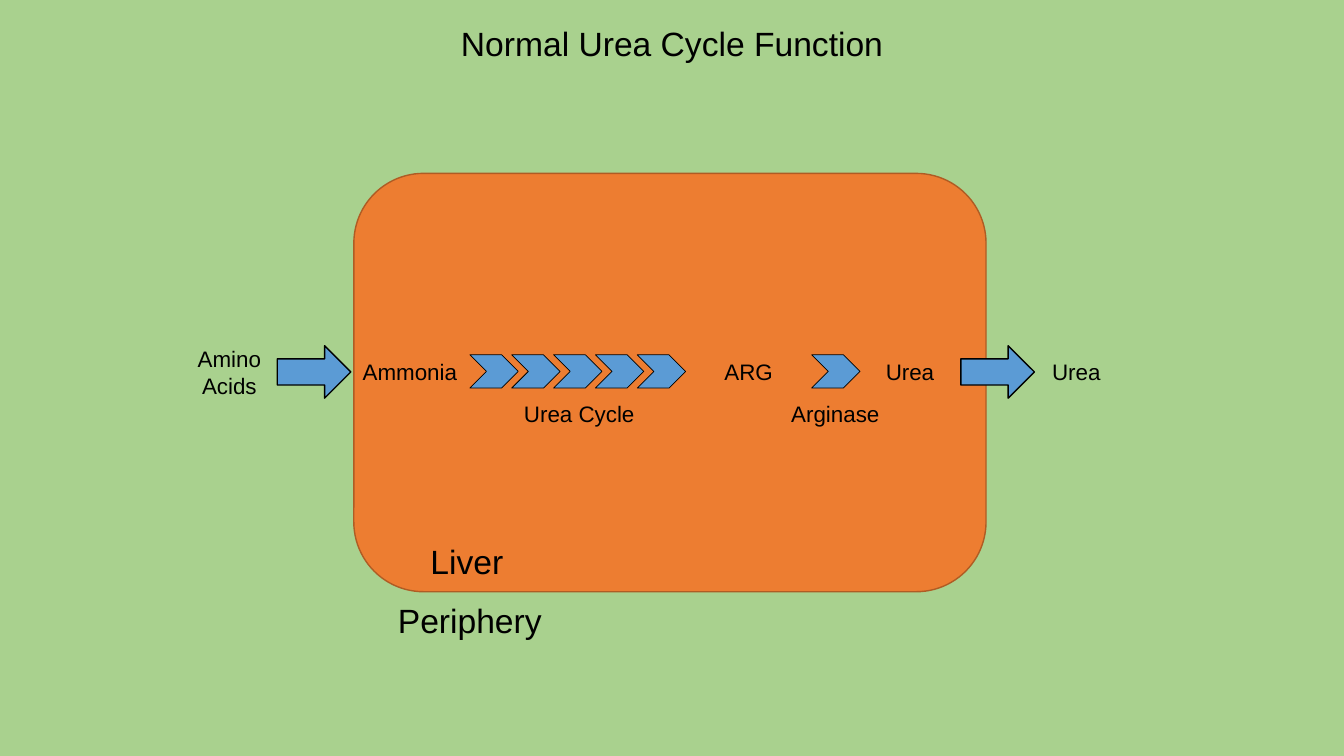
"""Build the slide on normal urea cycle function."""
import pptx
import pptx.dml.color
import pptx.enum.shapes
import pptx.enum.text
import pptx.util
from pptx.util import Inches

SHAPES = pptx.enum.shapes.MSO_SHAPE


def color(hex_string):
    return pptx.dml.color.RGBColor.from_string(hex_string)


def write(frame, text, size=16, font="Arial", ink="000000", wrap=True):
    frame.word_wrap = wrap
    frame.auto_size = pptx.enum.text.MSO_AUTO_SIZE.SHAPE_TO_FIT_TEXT
    frame.vertical_anchor = pptx.enum.text.MSO_ANCHOR.MIDDLE
    frame.text = text
    for paragraph in frame.paragraphs:
        paragraph.alignment = pptx.enum.text.PP_ALIGN.CENTER
        for run in paragraph.runs:
            run.font.size = pptx.util.Pt(size)
            run.font.name = font
            run.font.color.rgb = color(ink)


class Diagram:
    background = "A9D18E"
    organ = "ED7D31"
    organ_edge = "AF5C24"
    step = "5B9BD5"
    step_edge = "000000"

    def __init__(self, slide):
        self.slide = slide
        slide.background.fill.solid()
        slide.background.fill.fore_color.rgb = color(self.background)

    def shape(self, kind, left, top, width, height, fill, edge, weight=1):
        shape = self.slide.shapes.add_shape(
            kind, Inches(left), Inches(top), Inches(width), Inches(height))
        shape.shadow.inherit = False
        shape.fill.solid()
        shape.fill.fore_color.rgb = color(fill)
        shape.line.color.rgb = color(edge)
        shape.line.width = pptx.util.Pt(weight)

    def liver(self, left, top, width, height):
        self.shape(SHAPES.FLOWCHART_ALTERNATE_PROCESS, left, top, width, height,
                   self.organ, self.organ_edge)

    def transport(self, left):
        self.shape(SHAPES.RIGHT_ARROW, left, 3.43, 0.73, 0.52,
                   self.step, self.step_edge)

    def reaction(self, left):
        self.shape(SHAPES.CHEVRON, left, 3.52, 0.48, 0.33,
                   self.step, self.step_edge, weight=0.5)

    def label(self, text, left, top, width, height=0.37, **style):
        box = self.slide.shapes.add_textbox(
            Inches(left), Inches(top), Inches(width), Inches(height))
        write(box.text_frame, text, **style)


def main():
    deck = pptx.Presentation()
    deck.slide_width = Inches(13.33)
    deck.slide_height = Inches(7.5)
    diagram = Diagram(deck.slides.add_slide(deck.slide_layouts[6]))

    diagram.liver(3.51, 1.72, 6.27, 4.15)

    diagram.label("Amino\nAcids", 1.85, 3.37, 0.85, 0.64)
    metabolites = [("Ammonia", 3.49, 1.15, False), ("ARG", 6.73, 1.39, True),
                   ("Urea", 8.68, 0.69, False), ("Urea", 10.33, 0.69, False)]
    for metabolite, left, width, wrap in metabolites:
        diagram.label(metabolite, left, 3.5, width, wrap=wrap)
    for pathway, left, width in [("Urea Cycle", 5.04, 1.41), ("Arginase", 7.73, 1.11)]:
        diagram.label(pathway, left, 3.92, width)

    for cycle_step in range(5):
        diagram.reaction(4.66 + 0.415 * cycle_step)
    diagram.reaction(8.05)
    for crossing in (2.75, 9.53):
        diagram.transport(crossing)

    diagram.label("Normal Urea Cycle Function", 4.45, 0.18, 4.43, 0.5, size=24, wrap=False)
    for region, left, top, width in [("Liver", 4.12, 5.32, 1.02),
                                     ("Periphery", 3.81, 5.9, 1.7)]:
        diagram.label(region, left, top, width, 0.5, size=24)

    deck.save("out.pptx")


if __name__ == "__main__":
    main()
